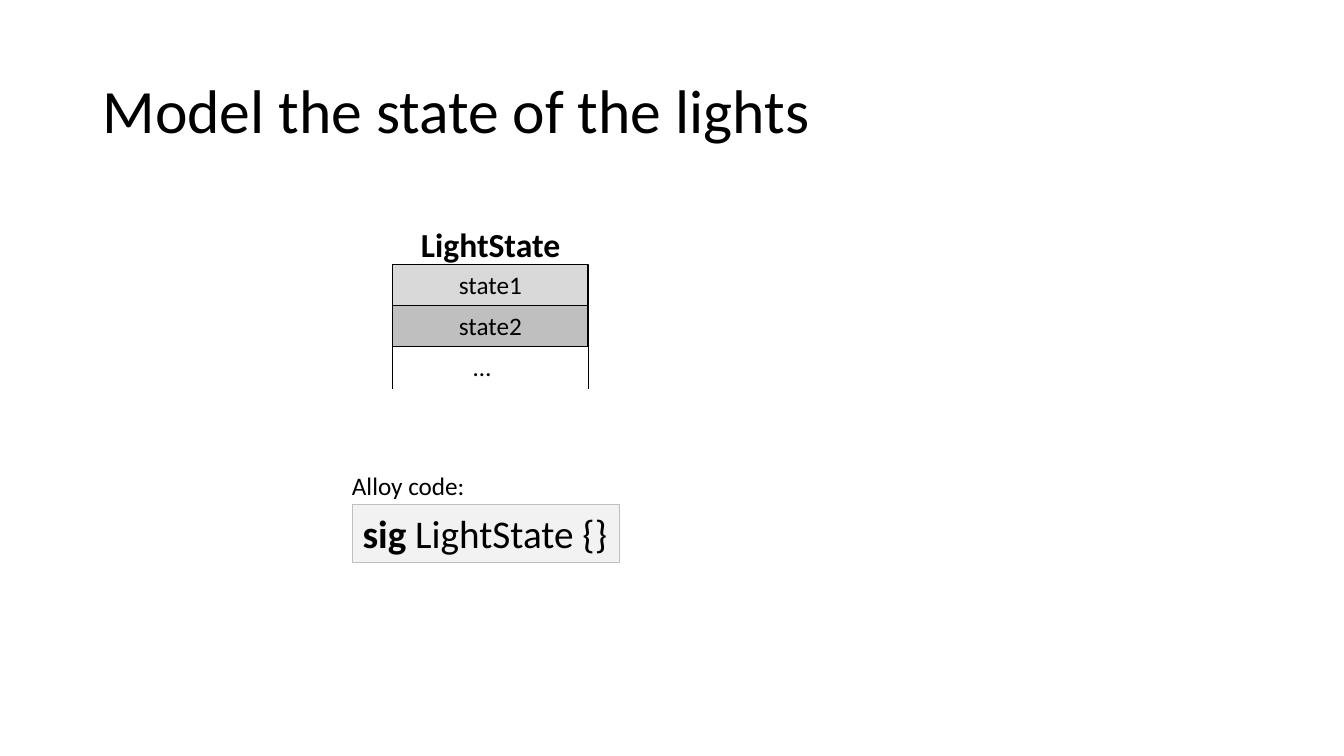
from lxml import etree
from pptx import Presentation
from pptx.dml.color import RGBColor
from pptx.enum import shapes, text
from pptx.oxml.ns import qn
from pptx.util import Cm, Pt

BLACK = RGBColor(0x00, 0x00, 0x00)
LIGHT_GREY = RGBColor(0xD9, 0xD9, 0xD9)
MID_GREY = RGBColor(0xBF, 0xBF, 0xBF)
CODE_GREY = RGBColor(0xF2, 0xF2, 0xF2)

deck = Presentation()
deck.slide_width, deck.slide_height = Cm(33.87), Cm(19.05)
slide = deck.slides.add_slide(deck.slide_layouts[5])


def write(holder, runs, size, align=text.PP_ALIGN.LEFT, wrap=False):
    """Fill a shape with one paragraph of (words, bold) runs."""
    frame = holder.text_frame
    frame.word_wrap = wrap
    frame.auto_size = text.MSO_AUTO_SIZE.SHAPE_TO_FIT_TEXT
    frame.vertical_anchor = text.MSO_ANCHOR.TOP
    paragraph = frame.paragraphs[0]
    paragraph.alignment = align
    for words, bold in runs:
        run = paragraph.add_run()
        run.text = words
        run.font.name = "Calibri"
        run.font.size = Pt(size)
        run.font.bold = bold
        run.font.color.rgb = BLACK


def add_box(left, top, width, height, fill, outline):
    box = slide.shapes.add_shape(shapes.MSO_SHAPE.RECTANGLE,
                                 Cm(left), Cm(top), Cm(width), Cm(height))
    box.shadow.inherit = False
    box.fill.solid()
    box.fill.fore_color.rgb = fill
    box.line.color.rgb = outline
    box.line.width = Pt(0.75)
    return box


# Title
title = slide.shapes.title
title.left, title.top, title.width, title.height = Cm(2.33), Cm(1.01), Cm(29.21), Cm(3.68)
write(title, [("Model the state of the lights", False)], 44, wrap=True)
title.text_frame.auto_size = text.MSO_AUTO_SIZE.NONE
title.text_frame.vertical_anchor = text.MSO_ANCHOR.MIDDLE
title.text_frame.paragraphs[0].line_spacing = 0.9

# Signature name, continuation dots and code caption
for words, bold, size, left, top, width, height in (
    ("LightState", True, 24, 10.36, 5.51, 4.06, 1.27),
    ("…", False, 18, 11.68, 8.72, 0.97, 1.03),
    ("Alloy code:", False, 18, 8.62, 11.73, 3.38, 1.03),
):
    label = slide.shapes.add_textbox(Cm(left), Cm(top), Cm(width), Cm(height))
    write(label, [(words, bold)], size)

# Stack of states
STACK_LEFT, STACK_TOP, STACK_WIDTH, ROW = 9.9, 6.67, 4.92, 1.03
states = (("state1", LIGHT_GREY), ("state2", MID_GREY))
for row, (state, fill) in enumerate(states):
    cell = add_box(STACK_LEFT, STACK_TOP + row * ROW, STACK_WIDTH, ROW, fill, BLACK)
    write(cell, [(state, False)], 18, text.PP_ALIGN.CENTER, wrap=True)

# Open sides below the stack
stack_bottom = STACK_TOP + len(states) * ROW
for x in (STACK_LEFT, STACK_LEFT + STACK_WIDTH):
    side = slide.shapes.add_connector(shapes.MSO_CONNECTOR.STRAIGHT,
                                      Cm(x), Cm(stack_bottom), Cm(x), Cm(stack_bottom + 1.06))
    side.line.color.rgb = BLACK
    side.line.width = Pt(0.5)
    etree.SubElement(side._element.spPr, qn("a:effectLst"))

# Alloy code
code = add_box(8.89, 12.72, 6.73, 1.45, CODE_GREY, MID_GREY)
write(code, [("sig", True), (" LightState {}", False)], 28)

deck.save("out.pptx")
